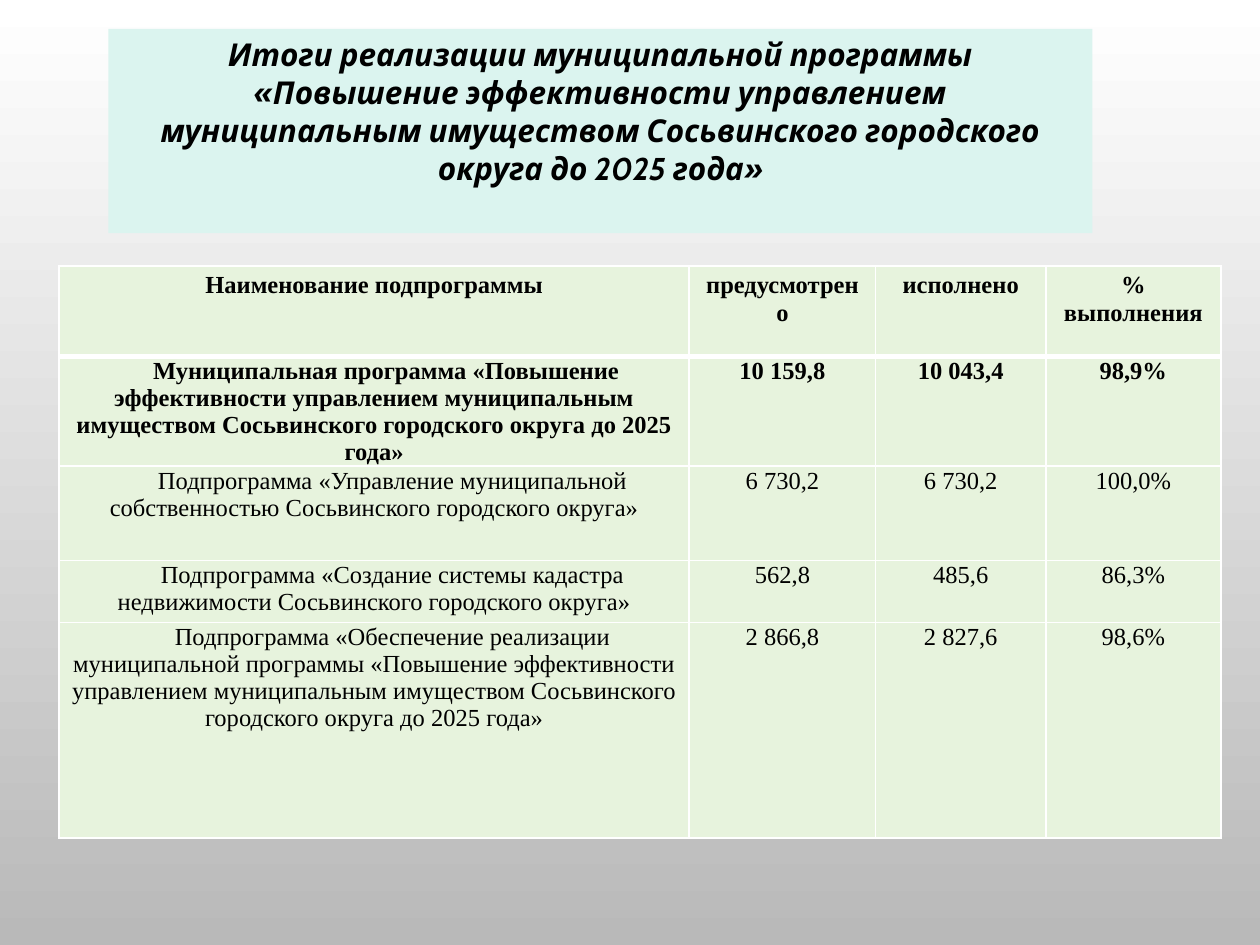
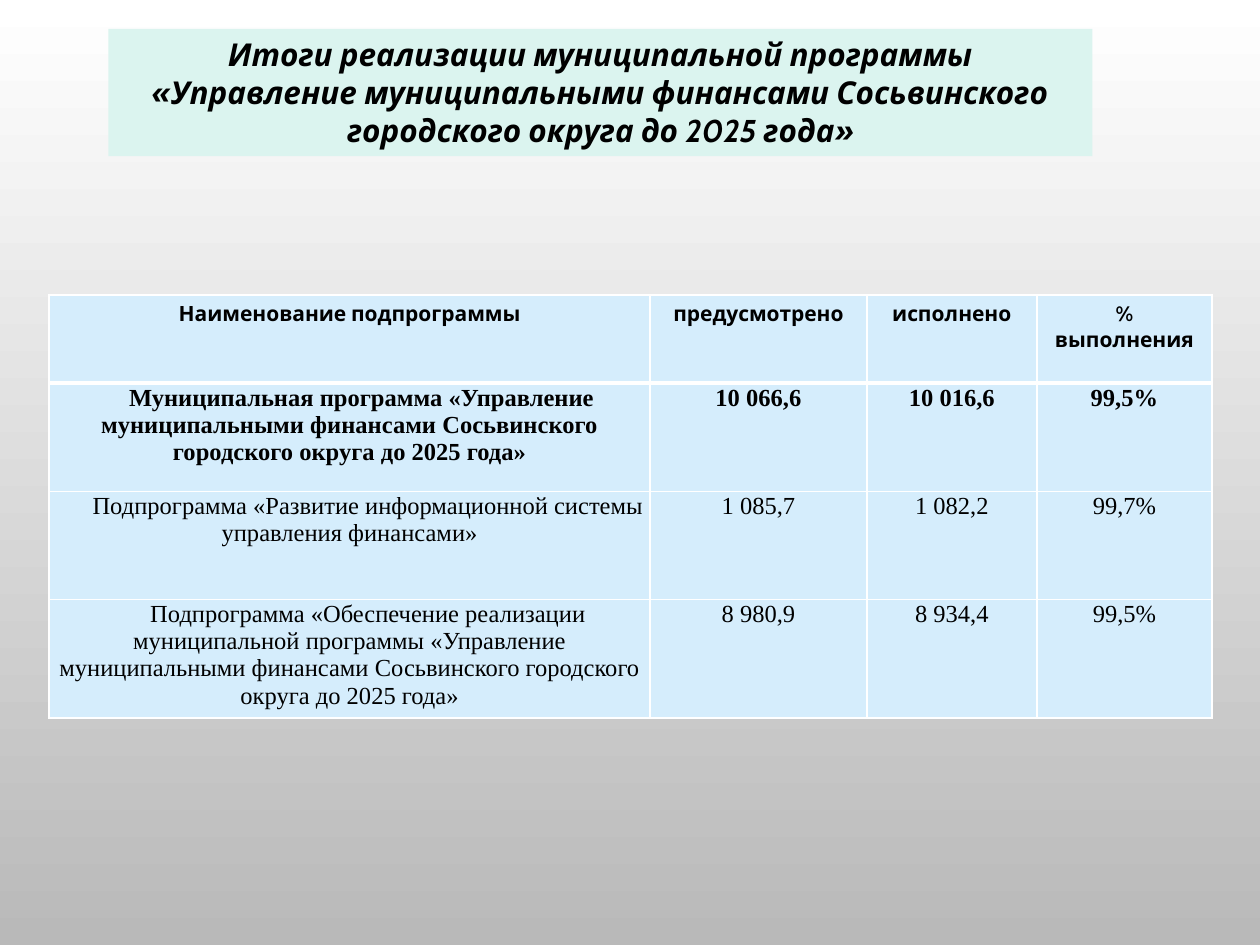
from dataclasses import dataclass

from lxml import etree
from pptx import Presentation
from pptx.dml.color import RGBColor
from pptx.enum import shapes, text
from pptx.oxml import ns
from pptx.util import Inches, Pt


@dataclass(frozen=True)
class Theme:
    """Colours, fonts and type sizes shared by the slides."""
    top: str = "FFFFFF"
    base: str = "B9B9B9"
    band: str = "DBF4EF"
    ink: str = "000000"
    edge: str = "FFFFFF"
    green: str = "E7F3DD"
    blue: str = "D5EDFC"
    sans: str = "Cabin"
    serif: str = "Times New Roman"
    large: int = 18
    body: int = 14
    small: int = 12


T = Theme()
HEADS = ("Наименование подпрограммы", "предусмотрено", "исполнено", "% выполнения")
TIGHT = dict(margin_left=Inches(0.01), margin_right=Inches(0.01),
             margin_top=Inches(0.01), margin_bottom=0)


def apply(item, look):
    """Set each attribute named in look on the item."""
    for key, val in look.items():
        setattr(item, key, val)


def paint(fill, color):
    """Give a fill one solid colour."""
    fill.solid()
    fill.fore_color.rgb = RGBColor.from_string(color)


def write(frame, words, indent=0, **look):
    """Put one centred paragraph into a text frame."""
    par = frame.paragraphs[0]
    par.alignment = text.PP_ALIGN.CENTER
    if indent:
        par._p.get_or_add_pPr().set("indent", str(Inches(indent)))
    run = par.add_run()
    run.text = words
    apply(run.font, look)
    run.font.color.rgb = RGBColor.from_string(T.ink)


def edge(cell, side, width):
    """Draw one border of a cell."""
    line = etree.SubElement(cell._tc.get_or_add_tcPr(), ns.qn(f"a:ln{side}"),
                            w=str(Pt(width)))
    fill = etree.SubElement(line, ns.qn("a:solidFill"))
    etree.SubElement(fill, ns.qn("a:srgbClr"), val=T.edge)


def shade(slide):
    """Fill the background from light to grey, downwards."""
    fill = slide.background.fill
    fill.gradient()
    fill.gradient_angle = 270
    for stop, color in zip(fill.gradient_stops, (T.top, T.base)):
        stop.color.rgb = RGBColor.from_string(color)


def title(slide, box, words):
    """Draw the title band."""
    band = slide.shapes.add_shape(shapes.MSO_SHAPE.RECTANGLE, *map(Inches, box))
    band.shadow.inherit = False
    paint(band.fill, T.band)
    band.line.fill.background()
    apply(band.text_frame, dict(
        word_wrap=True, vertical_anchor=text.MSO_ANCHOR.TOP,
        margin_left=Inches(0.2), margin_right=Inches(0.2)))
    write(band.text_frame, words, name=T.sans, size=Pt(T.large), bold=True, italic=True)


def grid(slide, spot, cols, highs, rows, color, head):
    """Draw the results table with a header and a bold total row."""
    box = (*spot, sum(cols), sum(highs))
    table = slide.shapes.add_table(len(highs), len(cols), *map(Inches, box)).table
    apply(table, dict(first_row=False, horz_banding=False))
    for col, wide in zip(table.columns, cols):
        col.width = Inches(wide)
    for row, high in zip(table.rows, highs):
        row.height = Inches(high)
    plain = dict(name=T.serif, size=Pt(T.body))
    for r, row in enumerate((HEADS, *rows)):
        for c, words in enumerate(row):
            cell = table.cell(r, c)
            if r:
                apply(cell, TIGHT)
            for side in "LRTB":
                heavy = (r, side) in ((0, "B"), (1, "T"))
                edge(cell, side, 3 if heavy else 1)
            paint(cell.fill, color)
            indent = (0.19 if r == 1 else 0.29) if r and c == 0 else 0
            write(cell.text_frame, words, indent, bold=r < 2, **(plain if r else head))


def report(deck, name, high, **part):
    """Build one slide on the results of a programme."""
    slide = deck.slides.add_slide(deck.slide_layouts[6])
    shade(slide)
    grid(slide, **part)
    title(slide, (0.86, 0.23, 7.81, high), f"Итоги реализации муниципальной программы {name}")


def main():
    """Build and save the deck."""
    deck = Presentation()
    apply(deck, dict(slide_width=Inches(10), slide_height=Inches(7.5)))
    estate = ("«Повышение эффективности управлением муниципальным имуществом "
              "Сосьвинского городского округа до 2025 года»")
    money = ("«Управление муниципальными финансами Сосьвинского городского "
             "округа до 2025 года»")
    main_row = "Муниципальная программа "
    sub = "Подпрограмма "
    back = sub + "«Обеспечение реализации муниципальной программы "
    report(
        deck, estate, 1.62, spot=(0.47, 2.11), color=T.green,
        cols=(5, 1.48, 1.35, 1.39), highs=(0.72, 0.75, 0.75, 0.49, 1.71),
        head=dict(name=T.serif, size=Pt(T.body)),
        rows=(
            (main_row + estate, "10 159,8", "10 043,4", "98,9%"),
            (sub + "«Управление муниципальной собственностью Сосьвинского "
             "городского округа»", "6 730,2", "6 730,2", "100,0%"),
            (sub + "«Создание системы кадастра недвижимости Сосьвинского "
             "городского округа»", "562,8", "485,6", "86,3%"),
            (back + estate, "2 866,8", "2 827,6", "98,6%"),
        ))
    report(
        deck, money, 1.01, spot=(0.39, 2.34), color=T.blue,
        cols=(4.77, 1.72, 1.35, 1.39), highs=(0.7, 0.86, 0.86, 0.94),
        head=dict(name=T.sans, size=Pt(T.small)),
        rows=(
            (main_row + money, "10 066,6", "10 016,6", "99,5%"),
            (sub + "«Развитие информационной системы управления финансами»",
             "1 085,7", "1 082,2", "99,7%"),
            (back + money, "8 980,9", "8 934,4", "99,5%"),
        ))
    deck.save("out.pptx")


if __name__ == "__main__":
    main()
